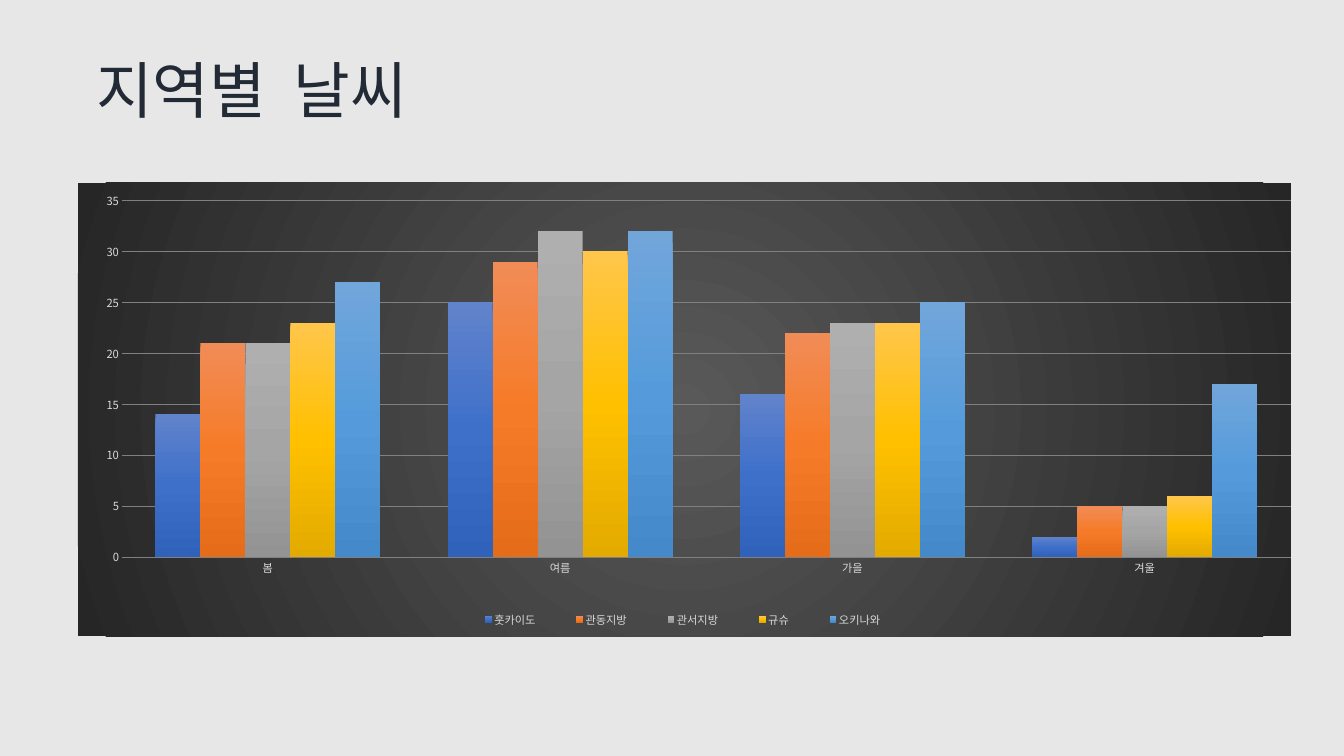
from pptx import Presentation
from pptx.chart.data import CategoryChartData
from pptx.dml.color import RGBColor
from pptx.enum.chart import XL_CHART_TYPE as ChartType, XL_LEGEND_POSITION as LegendPos, XL_TICK_MARK as Tick
from pptx.enum.text import MSO_ANCHOR as Anchor
from pptx.oxml import parse_xml
from pptx.oxml.ns import nsdecls, qn
from pptx.util import Pt

FONT = "Noto Sans CJK KR"
BACKGROUND = RGBColor(0xE7, 0xE7, 0xE7)
NAVY = RGBColor(0x22, 0x2A, 0x35)
PALE = RGBColor(0xD9, 0xD9, 0xD9)
GRID = RGBColor(0x80, 0x80, 0x80)
PANEL = (RGBColor(0x59, 0x59, 0x59), RGBColor(0x26, 0x26, 0x26))
BLUE = (RGBColor(0x61, 0x83, 0xCB), RGBColor(0x3E, 0x70, 0xCA), RGBColor(0x30, 0x62, 0xBB))
ORANGE = (RGBColor(0xF1, 0x8C, 0x57), RGBColor(0xF6, 0x7B, 0x28), RGBColor(0xE5, 0x6C, 0x19))
GRAY = (RGBColor(0xAF, 0xAF, 0xAF), RGBColor(0xA5, 0xA5, 0xA5), RGBColor(0x93, 0x93, 0x93))
GOLD = (RGBColor(0xFF, 0xC6, 0x4B), RGBColor(0xFF, 0xC0, 0x00), RGBColor(0xE3, 0xAB, 0x00))
SKY = (RGBColor(0x71, 0xA6, 0xDB), RGBColor(0x55, 0x9B, 0xDB), RGBColor(0x44, 0x8A, 0xCA))

LINEAR = '<a:lin ang="5400000" scaled="0"/>'
RADIAL = '<a:path path="circle"><a:fillToRect l="50000" t="50000" r="50000" b="50000"/></a:path>'
INNER = '<c:layoutTarget val="inner"/>'

SEASONS = ("봄", "여름", "가을", "겨울")
REGIONS = (
    ("훗카이도", (14, 25, 16, 2), BLUE),
    ("관동지방", (21, 29, 22, 5), ORANGE),
    ("관서지방", (21, 32, 23, 5), GRAY),
    ("규슈", (23, 30, 23, 6), GOLD),
    ("오키나와", (27, 32, 25, 17), SKY),
)


class WeatherSlide:
    """Holds the shared style and the slide being built."""

    def __init__(self, prs):
        self.s = prs.slides.add_slide(prs.slide_layouts[6])
        fill = self.s.background.fill
        fill.solid()
        fill.fore_color.rgb = BACKGROUND

    def style(self, font, size, color):
        font.name, font.size = FONT, Pt(size)
        font.color.rgb = color

    def gradient(self, colors, direction):
        step = 100000 // (len(colors) - 1)
        stops = "".join(
            f'<a:gs pos="{i * step}"><a:srgbClr val="{c}"/></a:gs>' for i, c in enumerate(colors)
        )
        return parse_xml(
            f'<a:gradFill {nsdecls("a")} rotWithShape="1"><a:gsLst>{stops}</a:gsLst>{direction}</a:gradFill>'
        )

    def title(self, text, x, y, w, h):
        tf = self.s.shapes.add_textbox(Pt(x), Pt(y), Pt(w), Pt(h)).text_frame
        tf.word_wrap = True
        tf.vertical_anchor = Anchor.MIDDLE
        p = tf.paragraphs[0]
        p.text = text
        p.line_spacing = 0.9
        self.style(p.runs[0].font, 66, NAVY)

    def column_chart(self, categories, series, x, y, w, h):
        data = CategoryChartData()
        data.categories = categories
        for name, values, _ in series:
            data.add_series(name, values)
        chart = self.s.shapes.add_chart(
            ChartType.COLUMN_CLUSTERED, Pt(x), Pt(y), Pt(w), Pt(h), data
        ).chart
        chart.has_title = False
        self.style(chart.font, 12, PALE)
        self.panel(chart)
        area = chart._chartSpace.chart.plotArea
        for old in area.findall(qn("c:layout")):
            area.remove(old)
        area.insert(0, self.layout(INNER, x=0.036, y=0.039, w=0.964, h=0.786))

        plot = chart.plots[0]
        plot.gap_width, plot.overlap, plot.vary_by_categories = 150, 0, False
        for ser, (_, _, colors) in zip(plot.series, series):
            ser.invert_if_negative = False
            ser._element.get_or_add_spPr().append(self.gradient(colors, LINEAR))

        for axis in (chart.category_axis, chart.value_axis):
            axis.major_tick_mark = axis.minor_tick_mark = Tick.NONE
            axis.format.line.fill.background()
            self.style(axis.tick_labels.font, 12, PALE)
        axis = chart.value_axis
        axis.minimum_scale, axis.maximum_scale, axis.major_unit = 0, 35, 5
        line = axis.major_gridlines.format.line
        line.width = Pt(0.75)
        line.color.rgb = GRID

        chart.has_legend = True
        legend = chart.legend
        legend.position = LegendPos.BOTTOM
        legend.include_in_layout = False
        self.style(legend.font, 12, PALE)
        element = legend._element
        for old in element.findall(qn("c:layout")):
            element.remove(old)
        element.find(qn("c:legendPos")).addnext(self.layout("", x=0.305, y=0.93, w=0.387, h=0.065))

    def panel(self, chart):
        sp_pr = parse_xml(f'<c:spPr {nsdecls("c", "a")}><a:ln><a:noFill/></a:ln></c:spPr>')
        sp_pr.insert(0, self.gradient(PANEL, RADIAL))
        chart._chartSpace.find(qn("c:txPr")).addprevious(sp_pr)

    def layout(self, target, **frame):
        sizes = "".join(f'<c:{k} val="{v}"/>' for k, v in frame.items())
        return parse_xml(
            f'<c:layout {nsdecls("c")}><c:manualLayout>{target}'
            f'<c:xMode val="edge"/><c:yMode val="edge"/>{sizes}</c:manualLayout></c:layout>'
        )


def main():
    prs = Presentation()
    prs.slide_width, prs.slide_height = Pt(1440), Pt(810)
    slide = WeatherSlide(prs)
    slide.title("지역별  날씨", 96, 32.4, 1248, 135)
    slide.column_chart(SEASONS, REGIONS, 83.5, 195.8, 1300, 486)
    prs.save("out.pptx")


if __name__ == "__main__":
    main()
